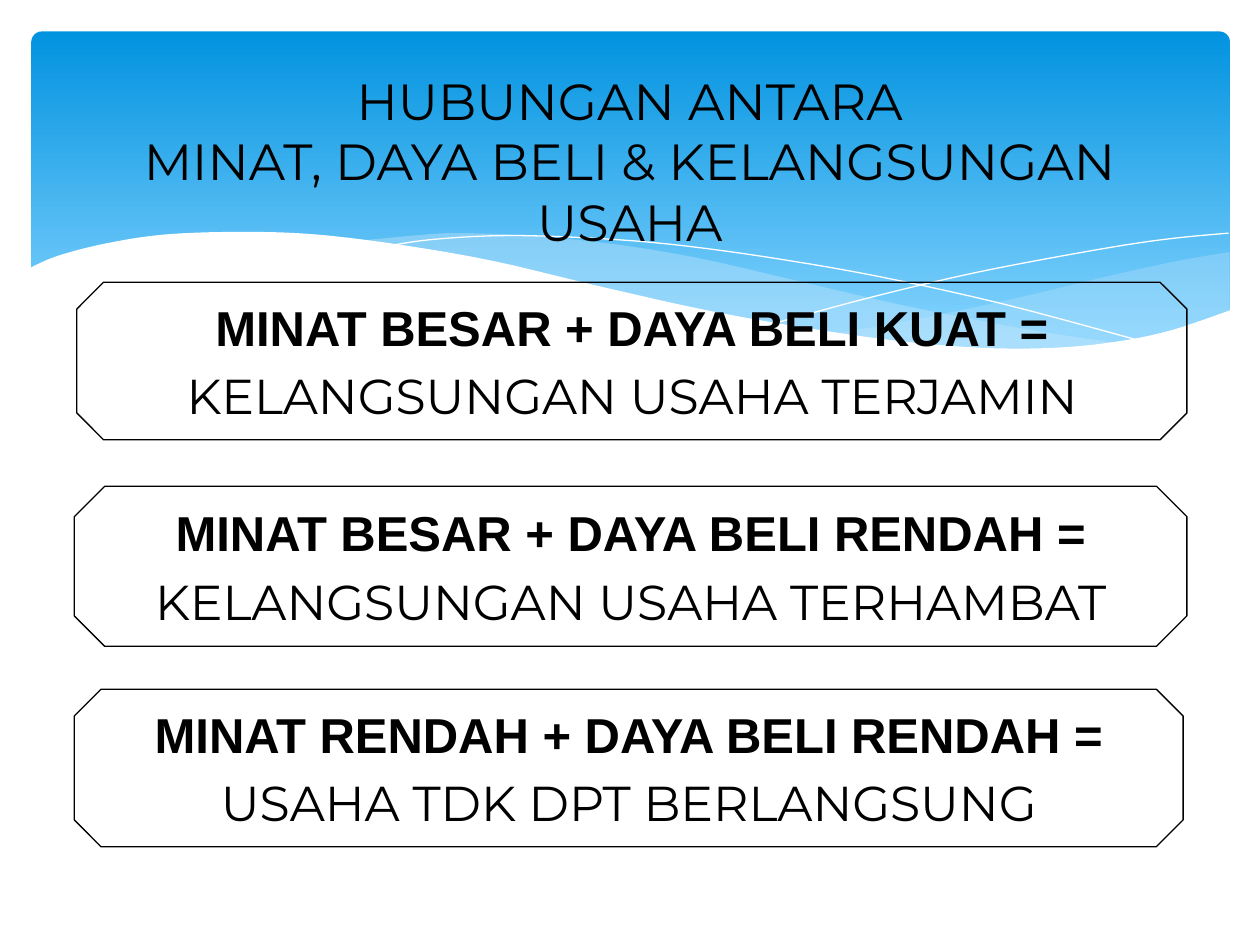
from lxml import etree
from pptx import Presentation
from pptx.dml.color import RGBColor
from pptx.enum.shapes import MSO_SHAPE as Geom
from pptx.enum.text import MSO_ANCHOR as Anchor, MSO_AUTO_SIZE as Fit, PP_ALIGN as Align
from pptx.oxml.ns import qn
from pptx.util import Inches, Pt

# Wave knots in inches from the banner's corner
EDGE = [(-0.02, 1.88), (0.21, 1.78), (0.6, 1.68), (1.07, 1.61), (1.68, 1.59),
        (2.25, 1.61), (2.91, 1.69), (3.66, 1.82), (4.5, 2.02), (5.3, 2.2),
        (6.01, 2.33), (6.83, 2.45), (7.53, 2.51), (8.12, 2.51), (8.62, 2.46),
        (9.05, 2.37), (9.52, 2.21)]
FLOOR = [(9.52, 3.04), (-0.02, 3.04)]
RIGHT_LOW = [(6.36, 2.4), (7.07, 2.49), (7.67, 2.53), (8.29, 2.51), (8.8, 2.44),
             (9.17, 2.34), (9.51, 2.22)]
RIGHT_TOP = [(9.51, 1.75), (9.1, 1.82), (8.51, 1.95), (7.8, 2.12), (7.04, 2.28),
             (6.36, 2.4)]
LEFT_TOP = [(2.61, 1.66), (3.03, 1.62), (3.36, 1.6), (3.95, 1.62), (4.64, 1.69),
            (5.3, 1.8), (6.04, 1.97), (6.81, 2.15), (7.5, 2.29), (8.12, 2.4),
            (8.68, 2.48)]
LEFT_LOW = [(8.68, 2.48), (8.23, 2.52), (7.71, 2.53), (7.23, 2.51), (6.55, 2.43),
            (5.76, 2.3), (5.05, 2.15), (4.24, 1.97), (3.58, 1.82), (2.98, 1.71),
            (2.61, 1.66)]
FALL = [(2.84, 1.7), (3.19, 1.65), (3.76, 1.62), (4.44, 1.64), (5.08, 1.69),
        (5.83, 1.79), (6.7, 1.94), (7.7, 2.16), (8.82, 2.46)]
RISE = [(5.88, 2.32), (6.7, 2.1), (7.51, 1.91), (8.41, 1.74), (8.99, 1.65), (9.5, 1.6)]

CARDS = [
    ((0.61, 2.24, 8.81, 1.25), 0.17, "MINAT BESAR + DAYA BELI KUAT =",
     "KELANGSUNGAN USAHA TERJAMIN"),
    ((0.59, 3.86, 8.83, 1.27), 0.19, "MINAT BESAR + DAYA BELI RENDAH =",
     "KELANGSUNGAN USAHA TERHAMBAT"),
    ((0.59, 5.47, 8.8, 1.25), 0.17, "MINAT RENDAH + DAYA BELI RENDAH =",
     "USAHA TDK DPT BERLANGSUNG"),
]


def paint(color, code):
    color.rgb = RGBColor.from_string(code)


def smooth(knots, steps=5):
    """Points of a Catmull-Rom curve through the knots."""
    ends = [knots[0], *knots, knots[-1]]
    points = [knots[0]]
    for a, b, c, d in zip(ends, ends[1:], ends[2:], ends[3:]):
        for step in range(1, steps + 1):
            t = step / steps
            points.append(tuple(
                0.5 * (2 * q + (r - p) * t + (2 * p - 5 * q + 4 * r - s) * t ** 2
                       + (3 * q - p - 3 * r + s) * t ** 3)
                for p, q, r, s in zip(a, b, c, d)))
    return points


def wave(slide, box, points, fill=None, alpha=100):
    """A filled wave, or a white hairline when there is no fill."""
    spots = [(Inches(box[0] + x), Inches(box[1] + y)) for x, y in points]
    pen = slide.shapes.build_freeform(*spots[0])
    pen.add_line_segments(spots[1:], close=fill is not None)
    shape = pen.convert_to_shape()
    shape.shadow.inherit = False
    if fill is None:
        shape.fill.background()
        paint(shape.line.color, "FFFFFF")
        shape.line.width = Pt(0)
        return
    shape.line.fill.background()
    shape.fill.solid()
    paint(shape.fill.fore_color, fill)
    if alpha < 100:
        tint = shape.fill._xPr.find(".//" + qn("a:srgbClr"))
        etree.SubElement(tint, qn("a:alpha"), val=str(alpha * 1000))


def add_banner(slide, box):
    sky = slide.shapes.add_shape(Geom.ROUNDED_RECTANGLE, *map(Inches, box))
    sky.adjustments[0] = 0.03
    sky.shadow.inherit = False
    sky.line.fill.background()
    sky.fill.gradient()
    sky.fill.gradient_angle = 270
    stops = zip(sky.fill.gradient_stops, (0, 0.9), ("0293E0", "83D3FE"))
    for stop, place, code in stops:
        stop.position = place
        paint(stop.color, code)
    wave(slide, box, smooth(RIGHT_LOW) + smooth(RIGHT_TOP), "C6E7FC", 29)
    wave(slide, box, smooth(LEFT_TOP) + smooth(LEFT_LOW), "C6E7FC", 40)
    wave(slide, box, smooth(FALL))
    wave(slide, box, smooth(RISE))
    wave(slide, box, smooth(EDGE) + FLOOR, "FFFFFF")


def style(para, size, face, bold=False):
    para.alignment = Align.CENTER
    for run in para.runs:
        run.font.size = Pt(size)
        run.font.name = face
        run.font.bold = bold
        paint(run.font.color, "000000")


def outline(run, code, width):
    line = etree.Element(qn("a:ln"), w=str(Pt(width)))
    fill = etree.SubElement(line, qn("a:solidFill"))
    etree.SubElement(fill, qn("a:srgbClr"), val=code)
    run.font._element.insert(0, line)


def set_title(slide, box, text):
    title = slide.shapes.title
    title.left, title.top, title.width, title.height = map(Inches, box)
    slide.shapes._spTree.append(title._element)  # in front of the banner
    frame = title.text_frame
    frame.text = text
    frame.word_wrap = False
    frame.auto_size = Fit.NONE
    frame.vertical_anchor = Anchor.TOP
    frame.margin_left = frame.margin_right = Inches(0.08)
    frame.margin_top = frame.margin_bottom = Inches(0.04)
    for para in frame.paragraphs:
        style(para, 29, "Montserrat")
        para.line_spacing = 1.0
        para.space_before = Pt(0)
        outline(para.runs[0], "FFFFFF", 0.75)


def add_card(slide, box, cut, cause, result):
    card = slide.shapes.add_shape(Geom.OCTAGON, *map(Inches, box))
    card.adjustments[0] = cut
    card.shadow.inherit = False
    card.fill.background()
    paint(card.line.color, "000000")
    card.line.width = Pt(0.75)
    frame = card.text_frame
    frame.text = f"{cause}\n{result}"
    frame.word_wrap = True
    frame.auto_size = Fit.SHAPE_TO_FIT_TEXT
    frame.vertical_anchor = Anchor.MIDDLE
    frame.margin_left = frame.margin_right = 0
    frame.margin_top = frame.margin_bottom = 0
    first, last = frame.paragraphs
    style(first, 28, "Arial", bold=True)
    style(last, 28, "Montserrat")
    last.space_before = Pt(5.6)


def main():
    deck = Presentation()
    deck.slide_width, deck.slide_height = Inches(10), Inches(7.5)
    slide = deck.slides.add_slide(deck.slide_layouts[5])
    add_banner(slide, (0.25, 0.25, 9.51, 2.7))
    set_title(slide, (0.64, 0.51, 8.72, 2.06),
              "HUBUNGAN ANTARA\nMINAT, DAYA BELI & KELANGSUNGAN USAHA")
    for card in CARDS:
        add_card(slide, *card)
    deck.save("out.pptx")


if __name__ == "__main__":
    main()
